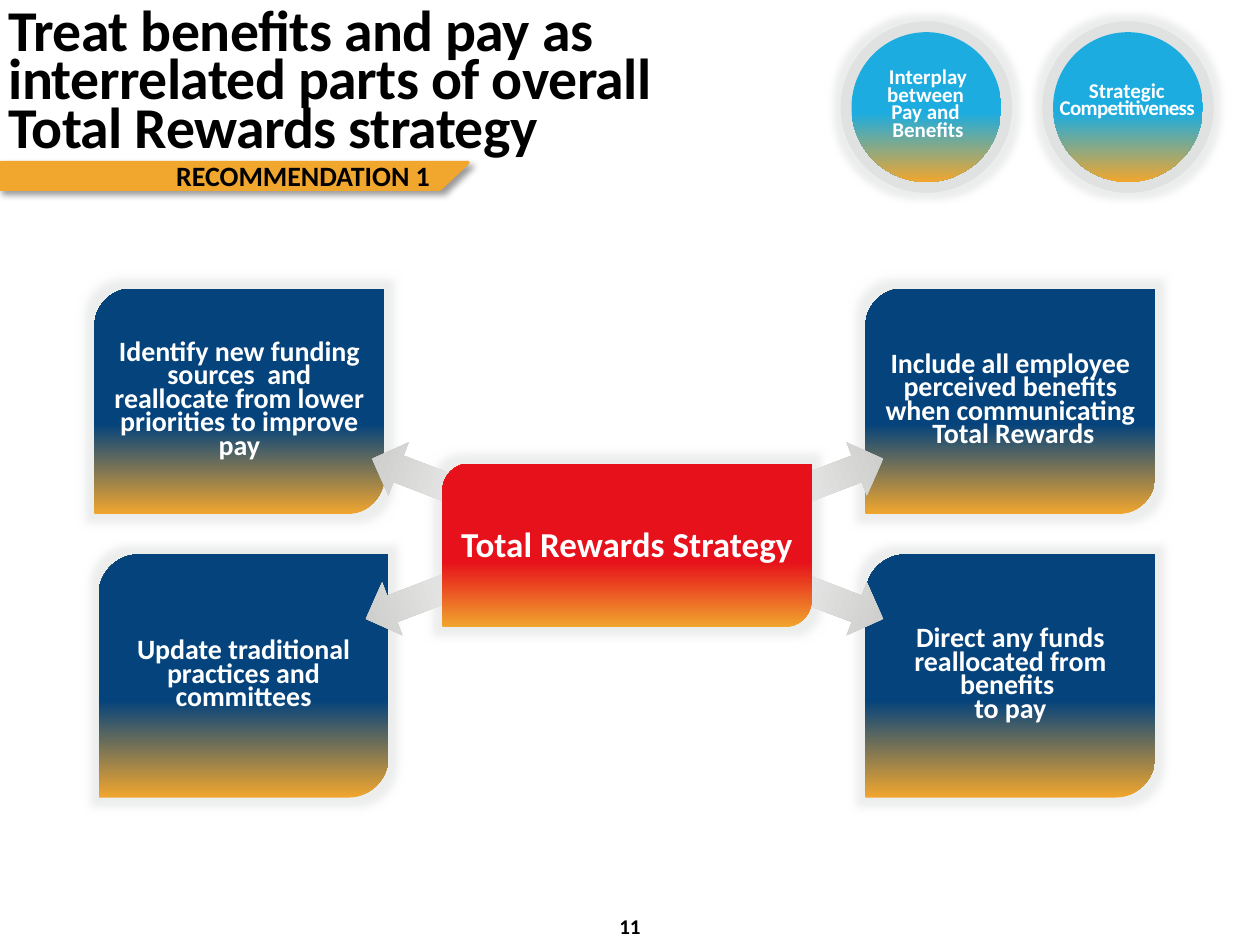
from lxml.etree import SubElement
from pptx import Presentation
from pptx.dml.color import RGBColor
from pptx.enum.shapes import MSO_SHAPE
from pptx.enum.text import MSO_ANCHOR, PP_ALIGN
from pptx.oxml.ns import qn
from pptx.util import Pt

COLORS = {
    "orange": "F1A62E", "navy": "05437C", "red": "E6111A", "sky": "1DACDF",
    "ring": "E0E1E1", "arrow": "C9CAC8", "white": "FFFFFF", "black": "000000",
}
FONT = "Calibri"


def rgb(name):
    return RGBColor.from_string(COLORS[name])


def fill_gradient(shape, stops, angle):
    """Angle runs counter-clockwise from left-to-right."""
    shape.fill.gradient()
    shape.fill.gradient_angle = angle
    for stop, (position, color) in zip(shape.fill.gradient_stops, stops):
        stop.position = position
        stop.color.rgb = rgb(color)


def add_effect(shape, tag, color, opacity, **attributes):
    effects = shape._element.spPr.find(qn("a:effectLst"))
    effect = SubElement(effects, qn(tag), attributes)
    tint = SubElement(effect, qn("a:srgbClr"), val=COLORS[color])
    SubElement(tint, qn("a:alpha"), val=str(opacity * 1000))


def add_glow(shape, radius):
    add_effect(shape, "a:glow", "ring", 60, rad=str(Pt(radius)))


def add_plain(slide, kind, box):
    shape = slide.shapes.add_shape(kind, *map(Pt, box))
    shape.shadow.inherit = False
    shape.line.fill.background()
    return shape


def write(shape, text, size, color, align, spacing=1.0, insets=None,
          anchor=MSO_ANCHOR.MIDDLE):
    frame = shape.text_frame
    frame.word_wrap = True
    frame.vertical_anchor = anchor
    if insets:
        (frame.margin_left, frame.margin_top,
         frame.margin_right, frame.margin_bottom) = map(Pt, insets)
    paragraph = frame.paragraphs[0]
    paragraph.text = text
    paragraph.alignment = align
    paragraph.line_spacing = spacing
    font = paragraph.font
    font.name, font.size, font.bold = FONT, Pt(size), True
    font.color.rgb = rgb(color)
    return paragraph


def track(run, points):
    run.font._element.set("spc", str(round(points * 100)))


def add_title(slide, box):
    title = slide.shapes.add_textbox(*map(Pt, box))
    paragraph = write(
        title, "Treat benefits and pay as \ninterrelated parts of overall \n"
        "Total Rewards strategy", 33, "black", PP_ALIGN.LEFT, 0.7)
    for run in paragraph.runs:
        track(run, -0.3)


def add_ribbon(slide, box):
    left, top, width, height = box
    slant = 16
    builder = slide.shapes.build_freeform(Pt(left), Pt(top + height))
    corners = [(left + width - slant, top + height), (left + width, top), (left, top)]
    builder.add_line_segments([(Pt(x), Pt(y)) for x, y in corners])
    ribbon = builder.convert_to_shape()
    ribbon.shadow.inherit = False
    ribbon.fill.solid()
    ribbon.fill.fore_color.rgb = rgb("orange")
    ribbon.line.color.rgb = rgb("orange")
    ribbon.line.width = Pt(2)
    add_effect(ribbon, "a:outerShdw", "black", 40, blurRad=str(Pt(4)),
               dist=str(Pt(3)), dir="2700000", algn="tl", rotWithShape="0")
    write(ribbon, "RECOMMENDATION 1", 16, "black", PP_ALIGN.RIGHT,
          insets=(7.2, 3.6, 21.6, 3.6))


def add_badge(slide, box, label, label_box, tight_last=False):
    left, top, size, _ = box
    inset = 6.2
    ring = add_plain(slide, MSO_SHAPE.OVAL, box)
    ring.fill.solid()
    ring.fill.fore_color.rgb = rgb("ring")
    add_glow(ring, 8)
    disc = add_plain(slide, MSO_SHAPE.OVAL, (left + inset, top + inset,
                                             size - 2 * inset, size - 2 * inset))
    fill_gradient(disc, [(0.54, "sky"), (1, "orange")], 270)
    dx, dy, width, height = label_box
    caption = slide.shapes.add_textbox(Pt(left + dx), Pt(top + dy), Pt(width), Pt(height))
    paragraph = write(caption, label, 12, "white", PP_ALIGN.CENTER, 0.7,
                      anchor=MSO_ANCHOR.TOP)
    if tight_last:
        track(paragraph.runs[-1], -0.4)


def add_panel(slide, box, text, color="navy", size=16, bottom_inset=3.6):
    panel = add_plain(slide, MSO_SHAPE.ROUND_2_DIAG_RECTANGLE, box)
    fill_gradient(panel, [(0, "orange"), (0.4, color)], 90)
    add_glow(panel, 10)
    write(panel, text, size, "white", PP_ALIGN.CENTER, 0.7,
          (3.6, 3.6, 3.6, bottom_inset))


def add_arrow(slide, box, flip_h, flip_v):
    arrow = add_plain(slide, MSO_SHAPE.RIGHT_ARROW, box)
    fill_gradient(arrow, [(0, "arrow"), (1, "white")], 180)
    arrow.rotation = 20.9 if flip_h != flip_v else 339.1
    for attribute, flipped in (("flipH", flip_h), ("flipV", flip_v)):
        if flipped:
            arrow._element.spPr.xfrm.set(attribute, "1")


def add_strategy_map(slide, box):
    left, top, width, _ = box
    panel_width, upper_height, lower_height = 165.6, 128.9, 139
    right, lower = left + width - panel_width, top + 151.9

    # Outer panels
    panels = [
        (right, top, upper_height, "Include all employee perceived benefits "
         "when communicating  Total Rewards"),
        (right, lower, lower_height, "Direct any funds reallocated from benefits \nto pay"),
        (left, top, upper_height, "Identify new funding sources  and reallocate "
         "from lower priorities to improve pay"),
        (left + 2.4, lower, lower_height, "Update traditional practices and committees"),
    ]
    for x, y, height, text in panels:
        add_panel(slide, (x, y, panel_width, height), text)

    # Arrows from the centre to the panels
    for dx, dy, flip_h, flip_v in [(363, 156.4, False, True), (363, 97.2, False, False),
                                   (152, 156.4, True, True), (155.6, 97.2, True, False)]:
        add_arrow(slide, (left + dx, top + dy, 90.7, 32.4), flip_h, flip_v)

    # Central panel
    add_panel(slide, (left + 198.8, top + 100, 211, 93.6),
              "Total Rewards Strategy", "red", 20, 0)


def add_page_number(slide, box):
    number = slide.shapes.add_textbox(*map(Pt, box))
    write(number, "11", 12, "black", PP_ALIGN.CENTER, anchor=MSO_ANCHOR.TOP)


def main():
    deck = Presentation()
    deck.slide_width, deck.slide_height = Pt(720), Pt(540)
    slide = deck.slides.add_slide(deck.slide_layouts[6])
    add_page_number(slide, (0, 518.4, 720, 21.6))
    add_strategy_map(slide, (54, 164.9, 606.2, 290.9))
    add_ribbon(slide, (0, 92.9, 267.4, 15.1))
    add_title(slide, (-2.2, 3.6, 696.2, 90))
    add_badge(slide, (480.4, 12.2, 98, 98), "Interplay between \nPay and \nBenefits",
              (4.2, 24.5, 91.4, 48.2))
    add_badge(slide, (595.6, 12.2, 98, 98), "Strategic \nCompetitiveness ",
              (0, 32.4, 99.4, 27.4), tight_last=True)
    deck.save("out.pptx")


if __name__ == "__main__":
    main()
